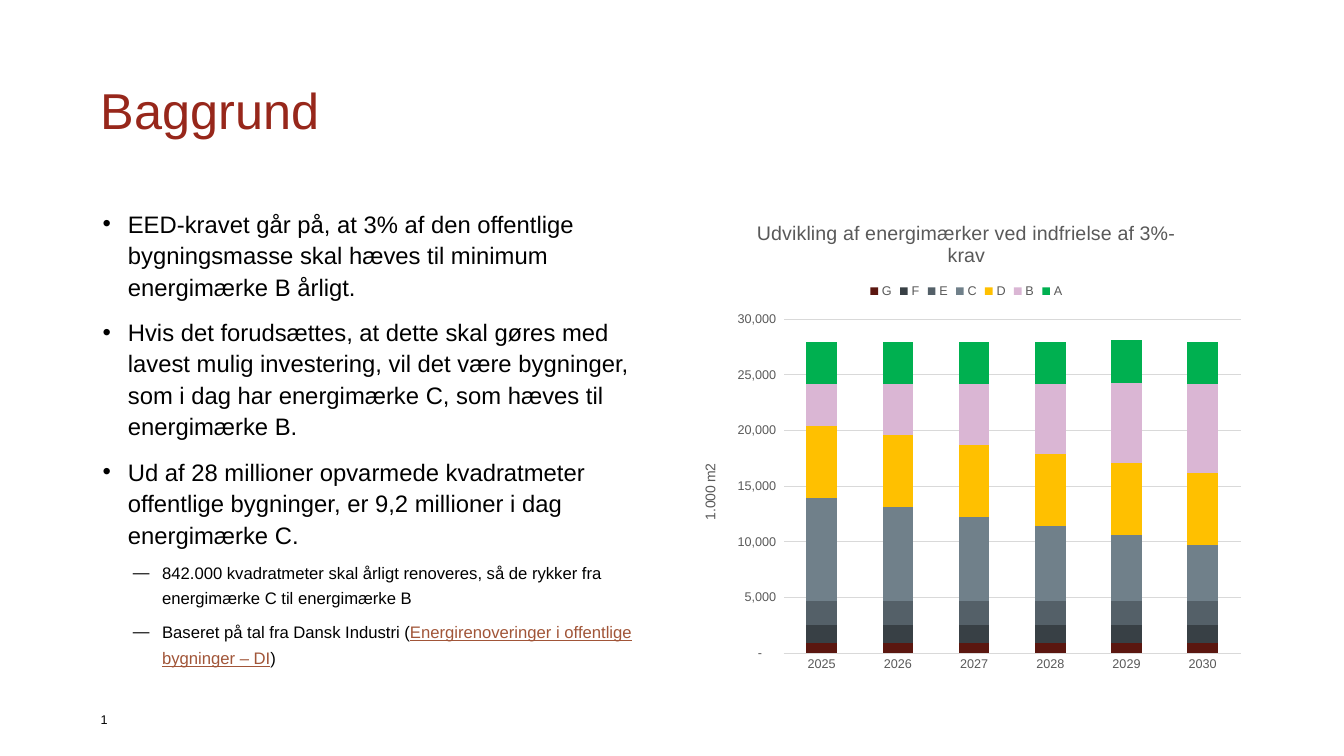
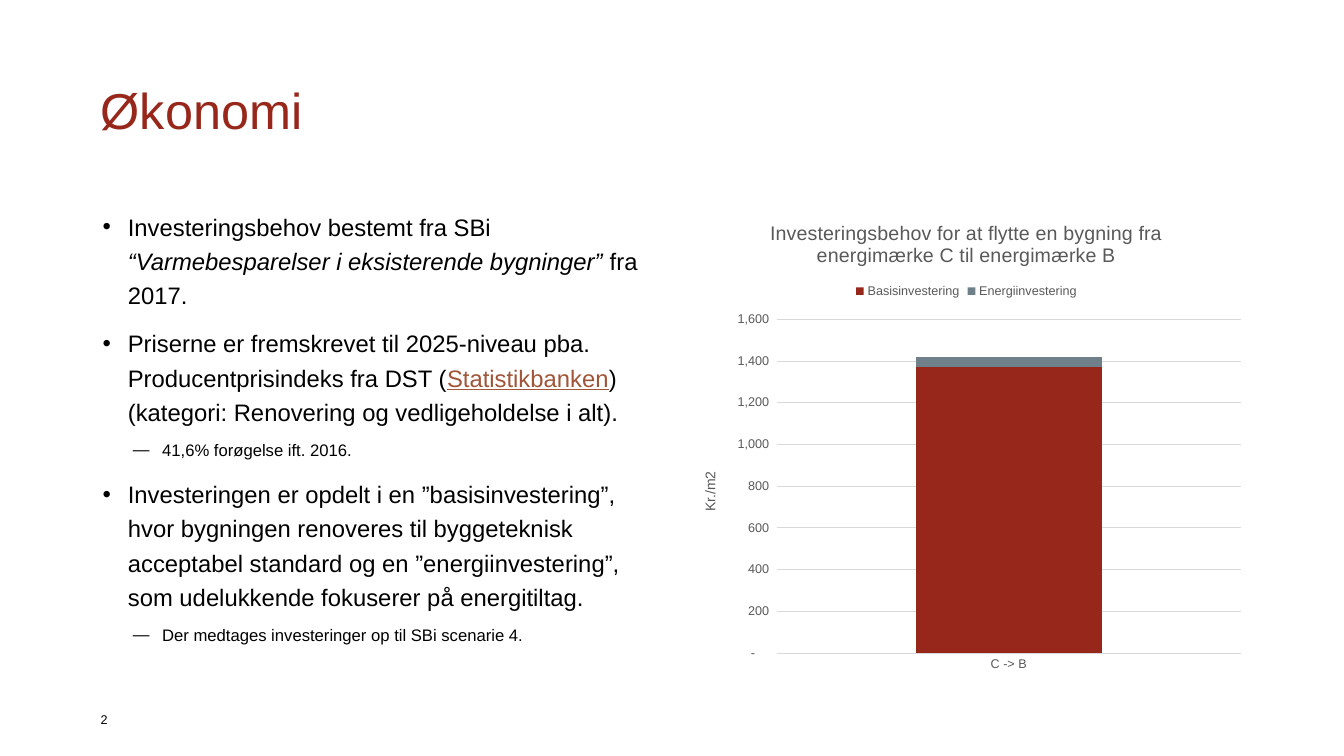
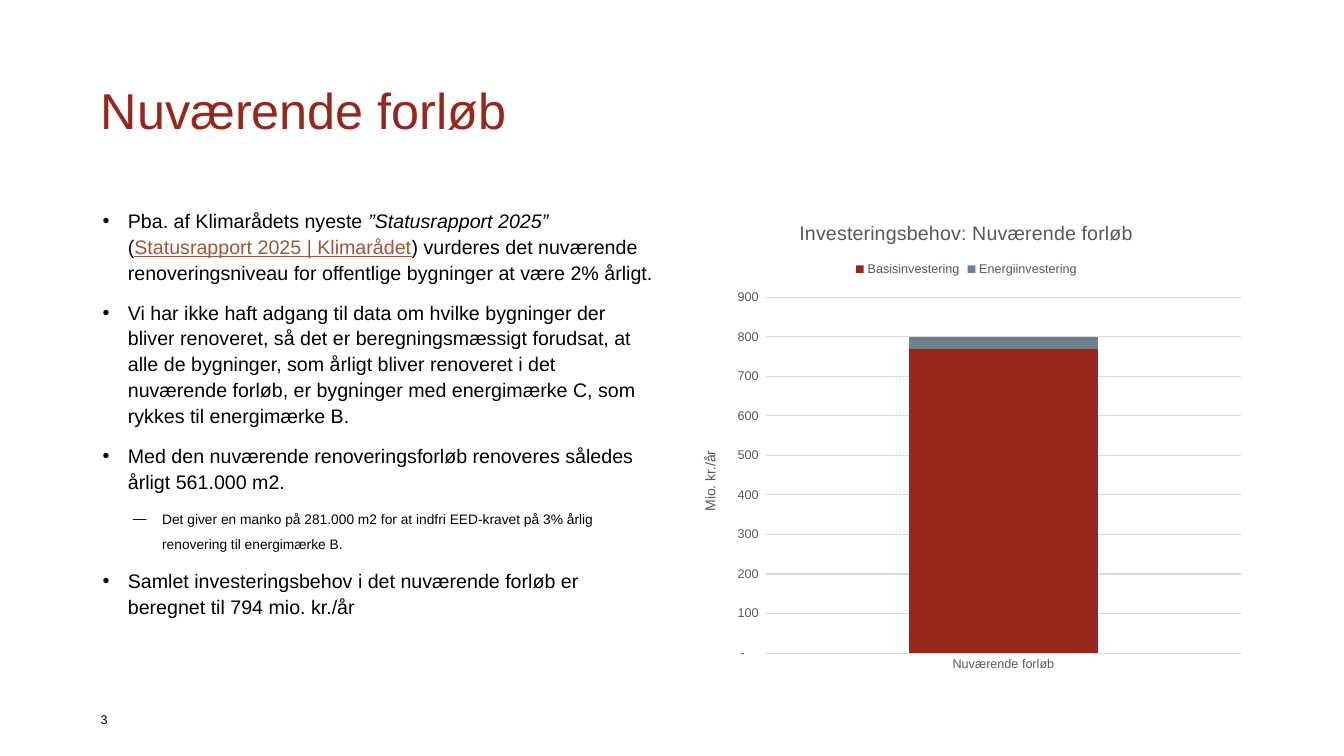
import dataclasses

import lxml.etree
import pptx
import pptx.chart.data
import pptx.dml.color
import pptx.enum.chart
import pptx.enum.text
import pptx.oxml.ns
import pptx.util

Inches, Pt = pptx.util.Inches, pptx.util.Pt
qn = pptx.oxml.ns.qn


# Colours and type sizes
@dataclasses.dataclass(frozen=True)
class Theme:
    font: str = "Arial"
    heading: str = "97271B"
    body: str = "000000"
    link: str = "A15538"
    chart_text: str = "595959"
    rule: str = "D9D9D9"
    slate: str = "70808A"
    heading_size: float = 36
    number_size: float = 9
    chart_title_size: float = 14
    axis_title_size: float = 10
    tick_size: float = 9
    sub_share: float = 0.7


THEME = Theme()

# Grid: two columns and three rows, in inches
WIDTH, HEIGHT = 13.33, 7.5
MARGIN, HEADING_LEFT = 0.92, 0.9
COLUMN, GUTTER = 5.67, 0.16
SPAN = 2 * COLUMN + GUTTER
HEADING_TOP, HEADING_HEIGHT = 0.4, 1.45
CONTENT_TOP, CONTENT_HEIGHT = 2, 4.76
FOOTER_TOP, FOOTER_HEIGHT = 6.94, 0.4

NUMBER_FORMAT = '_-* #,##0_-;\\-* #,##0_-;_-* "-"??_-;_-@_'


# Content: a paragraph is (level, runs), a run is (text, style)
@dataclasses.dataclass
class Topic:
    heading: str
    size: float
    spacing: float
    points: list
    chart_title: str
    unit: str
    top_value: int
    step: int
    categories: list
    series: list


TOPICS = [
    Topic(
        "Baggrund", 17, 1.1,
        [
            (0, [("EED-kravet går på, at 3% af den offentlige bygningsmasse skal "
                  "hæves til minimum energimærke B årligt.", "")]),
            (0, [("Hvis det forudsættes, at dette skal gøres med lavest mulig "
                  "investering, vil det være bygninger, som i dag har energimærke C, "
                  "som hæves til energimærke B.", "")]),
            (0, [("Ud af 28 millioner opvarmede kvadratmeter offentlige bygninger, "
                  "er 9,2 millioner i dag energimærke C.", "")]),
            (1, [("842.000 kvadratmeter skal årligt renoveres, så de rykker fra "
                  "energimærke C til energimærke B", "")]),
            (1, [("Baseret på tal fra Dansk Industri (", ""),
                 ("Energirenoveringer i offentlige bygninger – DI", "link"),
                 (")", "")]),
        ],
        "Udvikling af energimærker ved indfrielse af 3%-krav", "1.000 m2", 30000, 5000,
        ["2025", "2026", "2027", "2028", "2029", "2030"],
        [
            ("G", [900] * 6, "5B1710"),
            ("F", [1600] * 6, "384045"),
            ("E", [2200] * 6, "546068"),
            ("C", [9200, 8400, 7500, 6700, 5900, 5000], THEME.slate),
            ("D", [6500] * 6, "FFC000"),
            ("B", [3800, 4600, 5500, 6300, 7200, 8000], "DAB6D4"),
            ("A", [3800] * 6, "00B050"),
        ],
    ),
    Topic(
        "Økonomi", 17, 1.2,
        [
            (0, [("Investeringsbehov bestemt fra SBi ", ""),
                 ("“Varmebesparelser i eksisterende bygninger”", "italic"),
                 (" fra 2017.", "")]),
            (0, [("Priserne er fremskrevet til 2025-niveau pba. "
                  "Producentprisindeks fra DST (", ""),
                 ("Statistikbanken", "link"),
                 (") (kategori: Renovering og vedligeholdelse i alt).", "")]),
            (1, [("41,6% forøgelse ift. 2016.", "")]),
            (0, [("Investeringen er opdelt i en ”basisinvestering”, hvor bygningen "
                  "renoveres til byggeteknisk acceptabel standard og en "
                  "”energiinvestering”, som udelukkende fokuserer på energitiltag.", "")]),
            (1, [("Der medtages investeringer op til SBi scenarie 4.", "")]),
        ],
        "Investeringsbehov for at flytte en bygning fra energimærke C til energimærke B",
        "Kr./m2", 1600, 200, ["C -> B"],
        [("Basisinvestering", [1370], THEME.heading),
         ("Energiinvestering", [50], THEME.slate)],
    ),
    Topic(
        "Nuværende forløb", 14, 1.1,
        [
            (0, [("Pba. af Klimarådets nyeste ", ""),
                 ("”Statusrapport 2025” ", "italic"),
                 ("(", ""),
                 ("Statusrapport 2025 | Klimarådet", "link"),
                 (") vurderes det nuværende renoveringsniveau for offentlige "
                  "bygninger at være 2% årligt.", "")]),
            (0, [("Vi har ikke haft adgang til data om hvilke bygninger der bliver "
                  "renoveret, så det er beregningsmæssigt forudsat, at alle de "
                  "bygninger, som årligt bliver renoveret i det nuværende forløb, er "
                  "bygninger med energimærke C, som rykkes til energimærke B.", "")]),
            (0, [("Med den nuværende renoveringsforløb renoveres således årligt "
                  "561.000 m2.", "")]),
            (1, [("Det giver en manko på 281.000 m2 for at indfri EED-kravet på 3% "
                  "årlig renovering til energimærke B.", "")]),
            (0, [("Samlet investeringsbehov i det nuværende forløb er beregnet til "
                  "794 mio. kr./år", "")]),
        ],
        "Investeringsbehov: Nuværende forløb", "Mio. kr./år", 900, 100,
        ["Nuværende forløb"],
        [("Basisinvestering", [770], THEME.heading),
         ("Energiinvestering", [30], THEME.slate)],
    ),
]


def rgb(value):
    return pptx.dml.color.RGBColor.from_string(value)


def set_font(font, size, colour):
    font.name = THEME.font
    font.size = Pt(size)
    font.color.rgb = rgb(colour)
    font.bold = False


# Text
def add_frame(slide, left, top, width, height, middle=False):
    box = slide.shapes.add_textbox(Inches(left), Inches(top), Inches(width), Inches(height))
    frame = box.text_frame
    frame.word_wrap = True
    if middle:
        frame.vertical_anchor = pptx.enum.text.MSO_ANCHOR.MIDDLE
    return frame


def add_line(slide, text, left, top, width, height, size, colour):
    frame = add_frame(slide, left, top, width, height, middle=True)
    frame.text = text
    line = frame.paragraphs[0]
    set_font(line.runs[0].font, size, colour)
    return line


def set_bullet(paragraph, symbol, indent, hanging):
    properties = paragraph._p.get_or_add_pPr()
    properties.set("marL", str(Inches(indent)))
    properties.set("indent", str(-Inches(hanging)))
    lxml.etree.SubElement(properties, qn("a:buFont")).set("typeface", THEME.font)
    lxml.etree.SubElement(properties, qn("a:buChar")).set("char", symbol)


def add_points(slide, topic):
    frame = add_frame(slide, MARGIN, CONTENT_TOP, COLUMN, CONTENT_HEIGHT)
    for index, (level, runs) in enumerate(topic.points):
        point = frame.add_paragraph() if index else frame.paragraphs[0]
        point.level = level
        if level:
            set_bullet(point, "—", 0.59, 0.29)
            point.line_spacing = Pt(18.2)
        else:
            set_bullet(point, "•", 0.25, 0.25)
            point.line_spacing = topic.spacing
        if index:
            point.space_before = Pt(6 if level else 10)
        size = topic.size * (THEME.sub_share if level else 1)
        for text, style in runs:
            run = point.add_run()
            run.text = text
            set_font(run.font, size, THEME.link if style == "link" else THEME.body)
            if style == "link":
                run.font.underline = True
            elif style == "italic":
                run.font.italic = True


# Chart
def set_title(owner, text, size):
    owner.has_title = True
    frame = (owner.chart_title if hasattr(owner, "chart_title") else owner.axis_title).text_frame
    frame.text = text
    set_font(frame.paragraphs[0].runs[0].font, size, THEME.chart_text)


def style_axes(chart, topic):
    none = pptx.enum.chart.XL_TICK_MARK.NONE
    labels, values = chart.category_axis, chart.value_axis
    for axis in (labels, values):
        axis.major_tick_mark = axis.minor_tick_mark = none
        set_font(axis.tick_labels.font, THEME.tick_size, THEME.chart_text)
    values.has_major_gridlines = True
    for line in (labels.format.line, values.major_gridlines.format.line):
        line.color.rgb = rgb(THEME.rule)
        line.width = Pt(0.75)
    values.format.line.fill.background()
    values.minimum_scale = 0
    values.maximum_scale = topic.top_value
    values.major_unit = topic.step
    values.tick_labels.number_format = NUMBER_FORMAT
    values.tick_labels.number_format_is_linked = False
    set_title(values, topic.unit, THEME.axis_title_size)


def add_stacked_chart(slide, topic):
    data = pptx.chart.data.CategoryChartData(number_format=NUMBER_FORMAT)
    data.categories = topic.categories
    for name, values, _ in topic.series:
        data.add_series(name, values)
    chart = slide.shapes.add_chart(
        pptx.enum.chart.XL_CHART_TYPE.COLUMN_STACKED,
        Inches(MARGIN + COLUMN + GUTTER), Inches(CONTENT_TOP),
        Inches(COLUMN), Inches(CONTENT_HEIGHT), data).chart
    set_font(chart.font, THEME.axis_title_size, THEME.body)
    set_title(chart, topic.chart_title, THEME.chart_title_size)
    chart.chart_title.include_in_layout = False
    chart.has_legend = True
    chart.legend.position = pptx.enum.chart.XL_LEGEND_POSITION.TOP
    chart.legend.include_in_layout = False
    set_font(chart.legend.font, THEME.tick_size, THEME.chart_text)
    style_axes(chart, topic)
    plot = chart.plots[0]
    plot.gap_width, plot.overlap = 150, 100
    plot.vary_by_categories = False
    for series, (_, _, colour) in zip(plot.series, topic.series):
        series.format.fill.solid()
        series.format.fill.fore_color.rgb = rgb(colour)


# Slide
def add_topic_slide(deck, number, topic):
    slide = deck.slides.add_slide(deck.slide_layouts[6])
    heading = add_line(slide, topic.heading, HEADING_LEFT, HEADING_TOP, SPAN,
                       HEADING_HEIGHT, THEME.heading_size, THEME.heading)
    heading.line_spacing = 0.9
    add_points(slide, topic)
    add_line(slide, str(number), HEADING_LEFT, FOOTER_TOP, 4.5,
             FOOTER_HEIGHT, THEME.number_size, THEME.body)
    add_stacked_chart(slide, topic)


def main():
    deck = pptx.Presentation()
    deck.slide_width, deck.slide_height = Inches(WIDTH), Inches(HEIGHT)
    for number, topic in enumerate(TOPICS, 1):
        add_topic_slide(deck, number, topic)
    deck.save("out.pptx")


if __name__ == "__main__":
    main()
